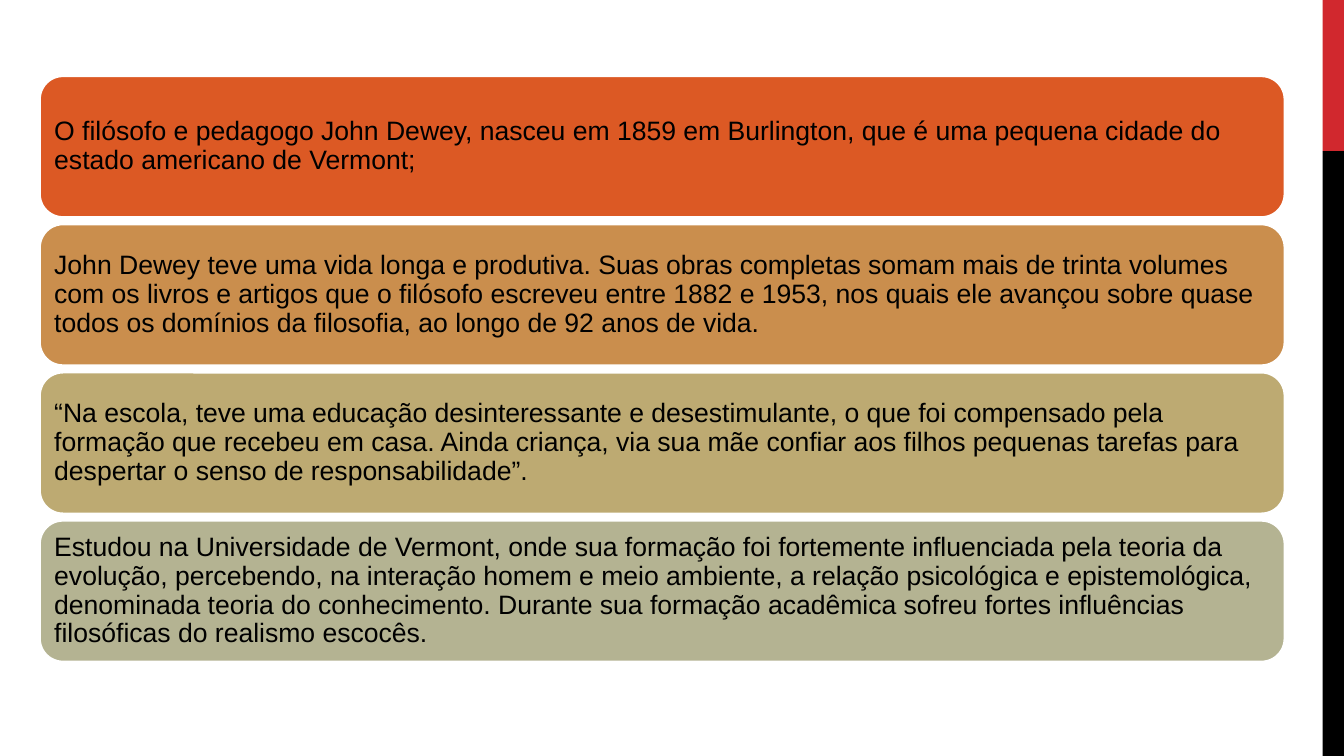
from pptx import Presentation
from pptx.dml.color import RGBColor
from pptx.enum.shapes import MSO_SHAPE
from pptx.enum.text import MSO_ANCHOR, PP_ALIGN
from pptx.util import Pt

# Content: fill name and wording of each card
CARDS = [
    ("orange", "O filósofo e pedagogo John Dewey, nasceu em 1859 em Burlington, que é uma "
     "pequena cidade do estado americano de Vermont;"),
    ("amber", "John Dewey teve uma vida longa e produtiva. Suas obras completas somam mais de "
     "trinta volumes com os livros e artigos que o filósofo escreveu entre 1882 e 1953, nos "
     "quais ele avançou sobre quase todos os domínios da filosofia, ao longo de 92 anos de vida."),
    ("sand", "“Na escola, teve uma educação desinteressante e desestimulante, o que foi "
     "compensado pela formação que recebeu em casa. Ainda criança, via sua mãe confiar aos "
     "filhos pequenas tarefas para despertar o senso de responsabilidade”."),
    ("sage", "Estudou na Universidade de Vermont, onde sua formação foi fortemente influenciada "
     "pela teoria da evolução, percebendo, na interação homem e meio ambiente, a relação "
     "psicológica e epistemológica, denominada teoria do conhecimento. Durante sua formação "
     "acadêmica sofreu fortes influências filosóficas do realismo escocês."),
]
COLORS = {
    "red": "D1282E", "black": "000000", "white": "FFFFFF",
    "orange": "DC5924", "amber": "CA8E4D", "sand": "BDAA72", "sage": "B4B392",
}

# Layout in points
WIDE, HIGH = 960, 540
BAR_X, BAR_CUT = 944.8, 108
LEFT, TOP, CARD_W, CARD_H, GAP = 28.1, 54, 889.9, 101.5, 4.34
INSET = 5.76


def color(name):
    return RGBColor.from_string(COLORS[name])


def add_box(slide, kind, x, y, w, h, fill):
    box = slide.shapes.add_shape(kind, Pt(x), Pt(y), Pt(w), Pt(h))
    box.shadow.inherit = False
    box.fill.solid()
    box.fill.fore_color.rgb = color(fill)
    box.line.fill.background()
    return box


def add_card(slide, y, fill, text):
    card = add_box(slide, MSO_SHAPE.ROUNDED_RECTANGLE, LEFT, y, CARD_W, CARD_H, fill)
    card.line.color.rgb = color("white")
    card.line.width = Pt(2.25)
    frame = card.text_frame
    frame.word_wrap = True
    frame.vertical_anchor = MSO_ANCHOR.MIDDLE
    frame.margin_left = frame.margin_right = Pt(INSET)
    frame.margin_top = frame.margin_bottom = Pt(INSET)
    frame.text = text
    para = frame.paragraphs[0]
    para.alignment = PP_ALIGN.LEFT
    para.line_spacing = 0.9
    para.space_after = Pt(6.65)
    font = para.runs[0].font
    font.name, font.size = "Arial", Pt(19)
    font.color.rgb = color("black")


def main():
    deck = Presentation()
    deck.slide_width, deck.slide_height = Pt(WIDE), Pt(HIGH)
    slide = deck.slides.add_slide(deck.slide_layouts[6])

    # Side bar
    for y, end, fill in [(0, BAR_CUT, "red"), (BAR_CUT, HIGH, "black")]:
        add_box(slide, MSO_SHAPE.RECTANGLE, BAR_X, y, WIDE - BAR_X, end - y, fill)

    # Stacked cards
    for row, (fill, text) in enumerate(CARDS):
        add_card(slide, TOP + row * (CARD_H + GAP), fill, text)

    deck.save("out.pptx")


if __name__ == "__main__":
    main()
